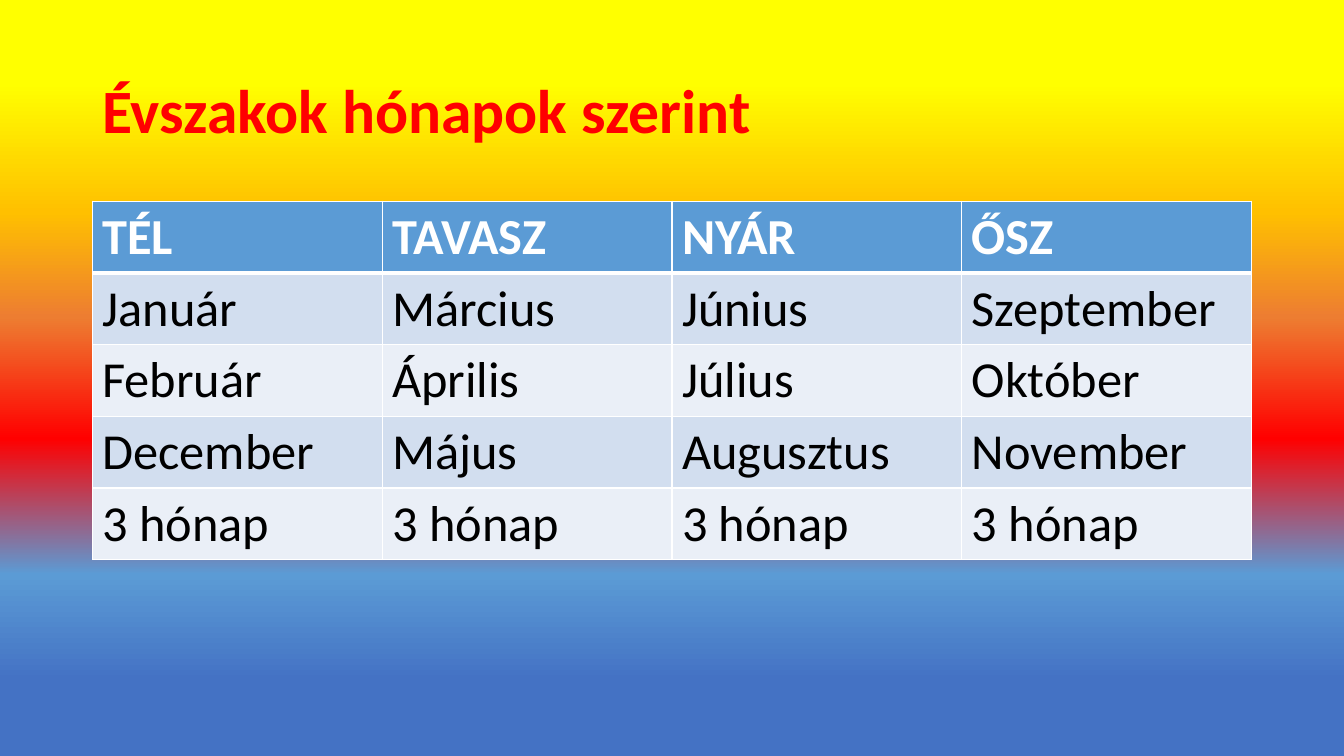
from lxml import etree
from pptx import Presentation
from pptx.dml.color import RGBColor
from pptx.enum.text import MSO_ANCHOR
from pptx.oxml.ns import qn
from pptx.util import Pt

MIDDLE = MSO_ANCHOR.MIDDLE
FONT = "Calibri"
LEFT, WIDTH = 66, 828

# Gradient from top to bottom: percent, colour
SKY = [(11, "FFFF00"), (28, "FFC000"), (42, "ED7D31"),
       (58, "FF0000"), (76, "5B9BD5"), (90, "4472C4")]

SEASONS = [
    ["TÉL", "TAVASZ", "NYÁR", "ŐSZ"],
    ["Január", "Március", "Június", "Szeptember"],
    ["Február", "Április", "Július", "Október"],
    ["December", "Május", "Augusztus", "November"],
    ["3 hónap"] * 4,
]
HEADER_FILL, BANDS = "5B9BD5", ("EAEFF7", "D2DEEF")


def rgb(value):
    return RGBColor.from_string(value)


def style(p, size, color, bold):
    p.font.name = FONT
    p.font.size = Pt(size)
    p.font.bold = bold
    p.font.color.rgb = rgb(color)


def set_background(s, stops):
    fill = s.background.fill
    fill.gradient()
    fill.gradient_angle = 270
    gs_list = next(s.element.iter(qn("a:gsLst")))
    for gs in list(gs_list):
        gs_list.remove(gs)
    for percent, color in stops:
        gs = etree.SubElement(gs_list, qn("a:gs"), pos=str(percent * 1000))
        etree.SubElement(gs, qn("a:srgbClr"), val=color)


def add_title(s, text):
    sp = s.shapes.add_textbox(Pt(LEFT), Pt(28.75), Pt(WIDTH), Pt(104.4))
    tf = sp.text_frame
    tf.word_wrap = True
    tf.vertical_anchor = MIDDLE
    p = tf.paragraphs[0]
    p.text = text
    p.line_spacing = 0.9
    style(p, 44, "FF0000", True)


def set_borders(cell, color, bottom):
    tc_pr = cell._tc.get_or_add_tcPr()
    for side, width in (("L", 1), ("R", 1), ("T", 1), ("B", bottom)):
        ln = etree.SubElement(tc_pr, qn(f"a:ln{side}"), w=str(Pt(width)))
        fill = etree.SubElement(ln, qn("a:solidFill"))
        etree.SubElement(fill, qn("a:srgbClr"), val=color)


def add_table(s, rows, top, height):
    table = s.shapes.add_table(len(rows), len(rows[0]), Pt(LEFT), Pt(top),
                               Pt(WIDTH), Pt(height)).table
    for i, row in enumerate(rows):
        header = i == 0
        for j, text in enumerate(row):
            cell = table.cell(i, j)
            cell.text = text
            style(cell.text_frame.paragraphs[0], 36,
                  "FFFFFF" if header else "000000", header)
            # The thick rule under the header is shared with the row below
            set_borders(cell, "FFFFFF", 3 if header else 1)
            if i == 1:
                cell._tc.tcPr.find(qn("a:lnT")).set("w", str(Pt(3)))
            cell.fill.solid()
            cell.fill.fore_color.rgb = rgb(HEADER_FILL if header else BANDS[i % 2])


def main():
    prs = Presentation()
    prs.slide_width, prs.slide_height = Pt(960), Pt(540)
    s = prs.slides.add_slide(prs.slide_layouts[6])
    set_background(s, SKY)
    add_title(s, "Évszakok hónapok szerint")
    add_table(s, SEASONS, 143.75, 256)
    prs.save("out.pptx")


if __name__ == "__main__":
    main()
